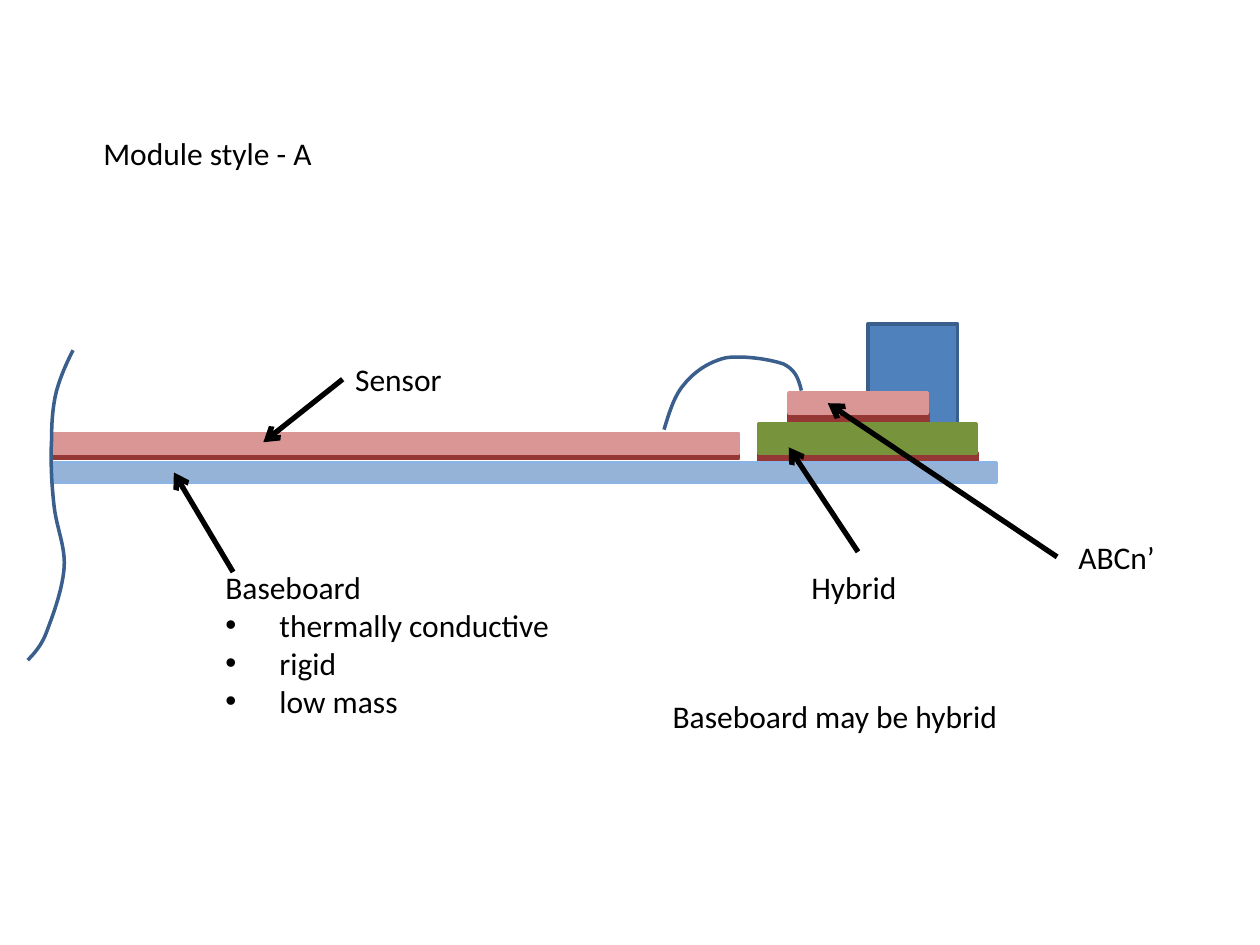
from lxml import etree
from pptx import Presentation
from pptx.dml.color import RGBColor
from pptx.enum.shapes import MSO_CONNECTOR, MSO_SHAPE
from pptx.enum.text import MSO_ANCHOR, MSO_AUTO_SIZE, PP_ALIGN
from pptx.oxml.ns import qn
from pptx.util import Inches, Pt

RECT, LINE = MSO_SHAPE.RECTANGLE, MSO_CONNECTOR.STRAIGHT
TOP, LEFT = MSO_ANCHOR.TOP, PP_ALIGN.LEFT
FIT, FIXED = MSO_AUTO_SIZE.SHAPE_TO_FIT_TEXT, MSO_AUTO_SIZE.NONE

BLACK = RGBColor(0x00, 0x00, 0x00)
BLUE = RGBColor(0x4F, 0x81, 0xBD)
NAVY = RGBColor(0x3A, 0x5F, 0x8C)
GLUE = RGBColor(0x95, 0x37, 0x35)
PINK = RGBColor(0xD9, 0x96, 0x94)
GREEN = RGBColor(0x77, 0x93, 0x3C)
SKY = RGBColor(0x95, 0xB3, 0xD7)
SKY_EDGE = RGBColor(0x8E, 0xB4, 0xE3)

# The slide is a grid of 100 columns by 75 rows of square cells
COLS, ROWS = 100, 75
CELL = Inches(0.1)
FONT = {"name": "Calibri", "size": Pt(18), "bold": False}
STEPS = 12

# Layers of the module, back to front: left, top, width, height, fill, edge
LAYERS = [
    (68.9, 25.7, 7.1, 7.9, BLUE, NAVY),
    (62.6, 32.8, 11.1, 0.8, GLUE, GLUE),
    (4.3, 35.9, 54.3, 0.5, GLUE, GLUE),
    (60.2, 35.9, 17.4, 0.8, GLUE, GLUE),
    (4.3, 36.7, 74.8, 1.6, SKY, SKY_EDGE),
    (4.3, 34.4, 54.3, 1.6, PINK, PINK),
    (60.2, 33.6, 17.3, 2.4, GREEN, GREEN),
    (62.6, 31.2, 11, 1.6, PINK, PINK),
]

# Curves: a start, then two handles and an end for each arc
BOND = [(63.6, 31), (63.4, 30.2), (63.2, 29.4), (62.2, 28.9),
        (61.1, 28.5), (58.9, 28.2), (57.6, 28.4),
        (56.3, 28.7), (55.1, 29.5), (54.3, 30.5),
        (53.5, 31.4), (53.1, 32.8), (52.7, 34.1)]
BREAK = [(5.8, 27.8), (5.3, 28.8), (4.8, 29.9), (4.5, 31),
         (4.2, 32.2), (4.1, 33.4), (4.1, 34.9),
         (4, 36.4), (4.1, 38.5), (4.3, 40.2),
         (4.5, 41.9), (5.2, 43.4), (5.1, 45),
         (5, 46.6), (4.3, 48.6), (3.8, 49.9),
         (3.4, 51.1), (2.8, 51.8), (2.2, 52.4)]

# Labels: left, top, width, height, wrap, text, bullets
LABELS = [
    (16.9, 44.6, 28, 13.1, True, "Baseboard",
     ["thermally conductive", "rigid", "low mass"]),
    (27.2, 28.1, 9, 4, False, "Sensor", []),
    (63.4, 44.6, 8.9, 4, False, "Hybrid", []),
    (84.6, 42.2, 8.1, 4, False, "ABCn’", []),
    (52.4, 54.8, 39.4, 4, True, "Baseboard may be hybrid", []),
]

# Pointers from a label to its part
ARROWS = [
    (18.5, 45.4, 13.8, 37.5),
    (27.2, 30.1, 20.9, 35.1),
    (68.1, 43.8, 62.6, 35.5),
    (83.9, 44.2, 65.7, 32),
]


def grid(*cells):
    return [round(n * CELL) for n in cells]


def apply(obj, style):
    for key, value in style.items():
        setattr(obj, key, value)


def stroke(line, color, width):
    line.color.rgb = color
    line.width = Pt(width)


def add_layer(slide, *box, fill, edge):
    shape = slide.shapes.add_shape(RECT, *grid(*box))
    shape.shadow.inherit = False
    shape.fill.solid()
    shape.fill.fore_color.rgb = fill
    stroke(shape.line, edge, 2)


def bezier(a, b, c, d, t):
    s = 1 - t
    return grid(*(s**3 * p + 3 * s * s * t * q + 3 * s * t * t * r + t**3 * e
                  for p, q, r, e in zip(a, b, c, d)))


def add_curve(slide, knots):
    path = slide.shapes.build_freeform(*grid(*knots[0]))
    dots = [bezier(*knots[i:i + 4], n / STEPS)
            for i in range(0, len(knots) - 1, 3)
            for n in range(1, STEPS + 1)]
    path.add_line_segments(dots, close=False)
    curve = path.convert_to_shape()
    curve.shadow.inherit = False
    curve.fill.background()
    stroke(curve.line, NAVY, 2)


def add_arrow(slide, *ends):
    arrow = slide.shapes.add_connector(LINE, *grid(*ends))
    stroke(arrow.line, BLACK, 3)
    etree.SubElement(arrow.line._get_or_add_ln(), qn("a:tailEnd"), type="arrow")
    etree.SubElement(arrow._element.spPr, qn("a:effectLst"))


def style_text(para):
    apply(para.font, FONT)
    para.font.color.rgb = BLACK


def add_bullet(para):
    props = para._p.get_or_add_pPr()
    indent = Inches(0.43)
    props.set("marL", str(indent))
    props.set("indent", str(-indent))
    etree.SubElement(props, qn("a:buFont"), typeface="Arial")
    etree.SubElement(props, qn("a:buChar"), char="•")


def add_label(slide, *box, wrap, text, items):
    frame = slide.shapes.add_textbox(*grid(*box)).text_frame
    apply(frame, {"word_wrap": wrap, "auto_size": FIT})
    head = frame.paragraphs[0]
    head.text = text
    style_text(head)
    for item in items:
        para = frame.add_paragraph()
        para.text = item
        add_bullet(para)
        style_text(para)


def set_title(slide, *box, text):
    title = slide.shapes.title
    apply(title, dict(zip(("left", "top", "width", "height"), grid(*box))))
    frame = title.text_frame
    frame.text = text
    apply(frame, {"word_wrap": True, "auto_size": FIXED,
                  "vertical_anchor": TOP})
    para = frame.paragraphs[0]
    para.alignment = LEFT
    style_text(para)


def main():
    deck = Presentation()
    apply(deck, {"slide_width": COLS * CELL, "slide_height": ROWS * CELL})
    slide = deck.slides.add_slide(deck.slide_layouts[5])
    set_title(slide, 7.2, 10.1, 27.2, 4, text="Module style - A")

    # Cross-section of the module
    for *box, fill, edge in LAYERS:
        add_layer(slide, *box, fill=fill, edge=edge)
    for knots in (BOND, BREAK):
        add_curve(slide, knots)

    # Labels and their pointers
    for *box, wrap, text, items in LABELS:
        add_label(slide, *box, wrap=wrap, text=text, items=items)
    for ends in ARROWS:
        add_arrow(slide, *ends)

    deck.save("out.pptx")


if __name__ == "__main__":
    main()
